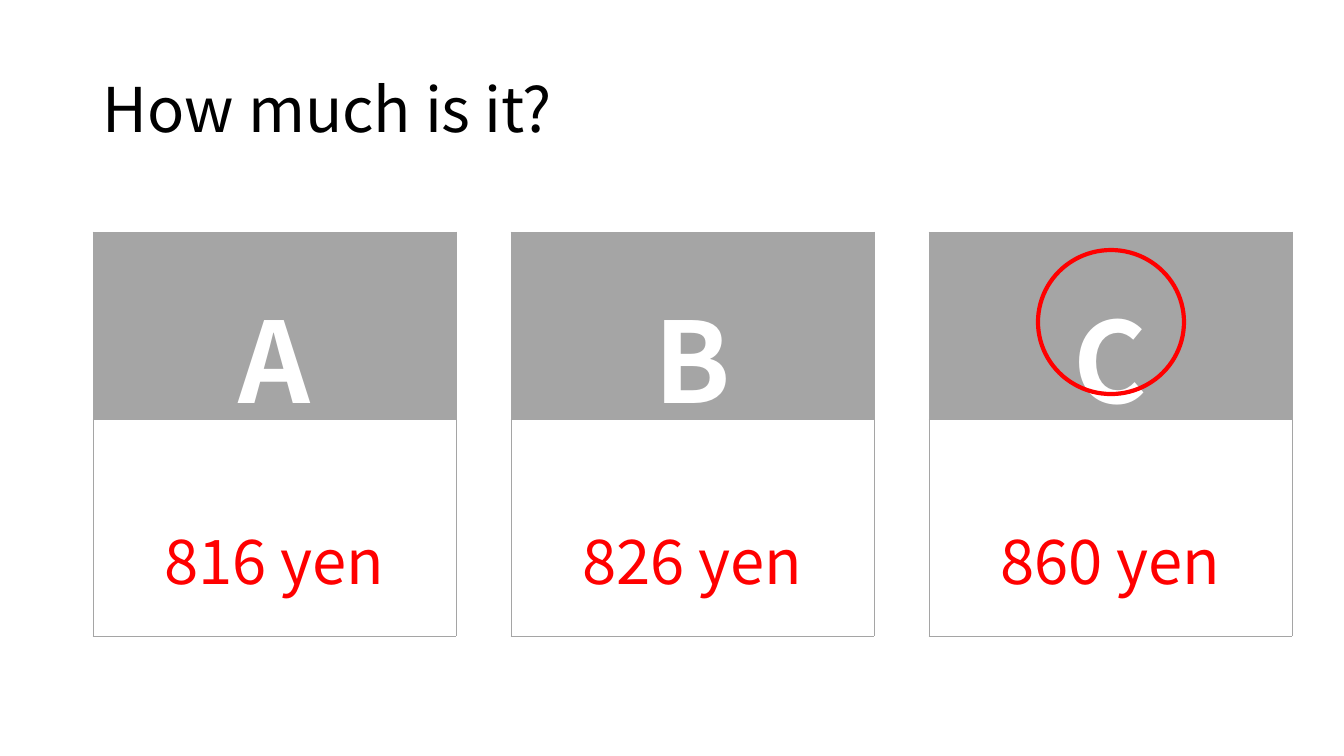
from lxml.etree import SubElement
from pptx import Presentation
from pptx.dml.color import RGBColor
from pptx.enum.shapes import MSO_SHAPE
from pptx.enum.text import MSO_ANCHOR, PP_ALIGN
from pptx.oxml.ns import qn
from pptx.util import Pt

EMU_PER_PX = 914400 / 100.8
FONT = "Noto Sans CJK JP"
BLACK = RGBColor(0x00, 0x00, 0x00)
WHITE = RGBColor(0xFF, 0xFF, 0xFF)
GRAY = RGBColor(0xA5, 0xA5, 0xA5)
RED = RGBColor(0xFF, 0x00, 0x00)

CHOICES = [("A", "816 yen"), ("B", "826 yen"), ("C", "860 yen")]
CARD_LEFT, CARD_TOP, CARD_WIDTH, CARD_PITCH = 93, 232, 363, 418
LETTER_HEIGHT, PRICE_HEIGHT = 187, 217


def px(length):
    """Turn pixels into EMU."""
    return round(length * EMU_PER_PX)


def format_paragraph(paragraph, size, color, bold=False):
    """Set the font of every run in a paragraph."""
    for run in paragraph.runs:
        run.font.name = FONT
        run.font.size = Pt(size)
        run.font.bold = bold
        run.font.color.rgb = color


def add_title(slide, text):
    """Add the question at the top of the slide."""
    shape = slide.shapes.add_textbox(px(93), px(40), px(1159), px(146))
    text_frame = shape.text_frame
    text_frame.word_wrap = True
    text_frame.vertical_anchor = MSO_ANCHOR.MIDDLE
    text_frame.text = text
    paragraph = text_frame.paragraphs[0]
    paragraph.line_spacing = 0.9
    format_paragraph(paragraph, 44, BLACK)


def add_borders(cell):
    """Draw a thin gray line on the four sides of a cell."""
    properties = cell._tc.get_or_add_tcPr()
    for index, side in enumerate(("a:lnL", "a:lnR", "a:lnT", "a:lnB")):
        line = SubElement(properties, qn(side), w=str(Pt(0.5)))
        fill = SubElement(line, qn("a:solidFill"))
        SubElement(fill, qn("a:srgbClr"), val=str(GRAY))
        properties.insert(index, line)


def fill_cell(cell, text, size, color, margins, bold=False):
    """Write centred text near the bottom of a bordered cell."""
    cell.text_frame.text = text
    cell.vertical_anchor = MSO_ANCHOR.BOTTOM
    cell.margin_top, cell.margin_bottom = map(px, margins)
    paragraph = cell.text_frame.paragraphs[0]
    paragraph.alignment = PP_ALIGN.CENTER
    format_paragraph(paragraph, size, color, bold)
    add_borders(cell)


def add_choice(slide, left, letter, price):
    """Add a card with a letter above its price."""
    frame = slide.shapes.add_table(
        2, 1, px(left), px(CARD_TOP), px(CARD_WIDTH), px(LETTER_HEIGHT + PRICE_HEIGHT)
    )
    table = frame.table
    table.first_row = False
    table.horz_banding = False
    table.rows[0].height = px(LETTER_HEIGHT)
    table.rows[1].height = px(PRICE_HEIGHT)
    letter_cell, price_cell = table.cell(0, 0), table.cell(1, 0)
    letter_cell.fill.solid()
    letter_cell.fill.fore_color.rgb = GRAY
    price_cell.fill.background()
    fill_cell(letter_cell, letter, 80, WHITE, (42, 5), bold=True)
    fill_cell(price_cell, price, 44, RED, (5, 34))


def add_answer_ring(slide):
    """Add the red ring around the right letter."""
    shape = slide.shapes.add_shape(
        MSO_SHAPE.OVAL, px(1038), px(250), px(146), px(144)
    )
    shape.shadow.inherit = False
    shape.fill.background()
    shape.line.color.rgb = RED
    shape.line.width = Pt(3)


def main():
    """Build and save the slide."""
    presentation = Presentation()
    presentation.slide_width = px(1344)
    presentation.slide_height = px(756)
    slide = presentation.slides.add_slide(presentation.slide_layouts[6])
    add_title(slide, "How much is it?")
    for index, (letter, price) in enumerate(CHOICES):
        add_choice(slide, CARD_LEFT + index * CARD_PITCH, letter, price)
    add_answer_ring(slide)
    presentation.save("out.pptx")


if __name__ == "__main__":
    main()
